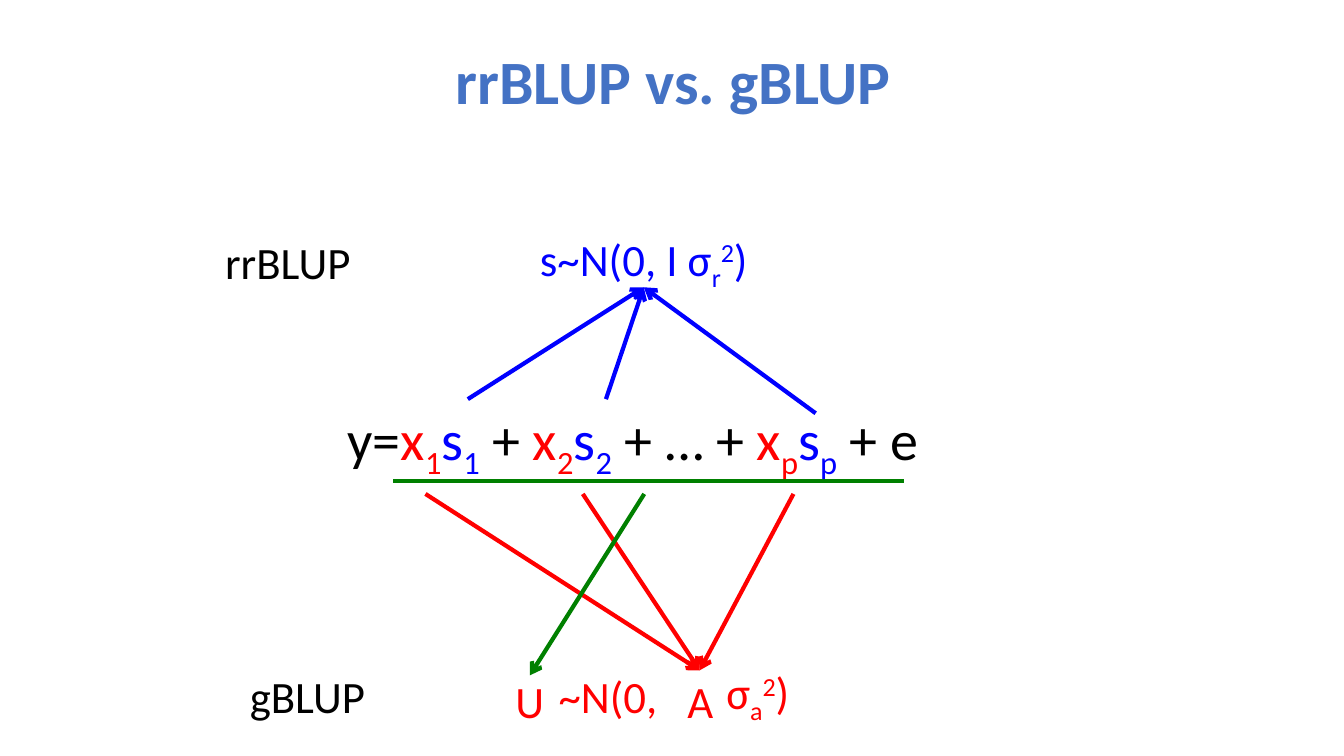
from lxml import etree
from pptx import Presentation
from pptx.dml.color import RGBColor
from pptx.enum.shapes import MSO_CONNECTOR
from pptx.enum.text import MSO_ANCHOR, MSO_AUTO_SIZE, PP_ALIGN
from pptx.oxml.ns import qn
from pptx.util import Pt

PX = 9144  # 100 px to the inch
STRAIGHT = MSO_CONNECTOR.STRAIGHT
LEFT, CENTER = PP_ALIGN.LEFT, PP_ALIGN.CENTER
TOP, MIDDLE = MSO_ANCHOR.TOP, MSO_ANCHOR.MIDDLE
FIT_SHAPE = MSO_AUTO_SIZE.SHAPE_TO_FIT_TEXT
SIDE_TOP, SIDE_BOTTOM = 0, 2

TITLE_BLUE = RGBColor(0x44, 0x72, 0xC4)
BLACK = RGBColor(0, 0, 0)
RED = RGBColor(0xFF, 0, 0)
BLUE = RGBColor(0, 0, 0xFF)
GREEN = RGBColor(0, 0x80, 0)

SUB, SUPER = -25, 30  # baseline shift in percent


def add_run(p, text, size=32, color=BLACK, bold=False, base=0, font="Calibri"):
    r = p.add_run()
    r.text = text
    r.font.name = font
    r.font.size = Pt(size)
    r.font.bold = bold
    r.font.color.rgb = color
    if base:
        r._r.get_or_add_rPr().set("baseline", str(base * 1000))


def term(index):
    """Runs of one marker term: x and s, each with its index."""
    return [("x", RED, 0), (index, RED, SUB), ("s", BLUE, 0), (index, BLUE, SUB)]


def variance(lead, index, color):
    """Runs of a variance: sigma with an index, squared."""
    return [(lead, color, 0), (index, color, SUB), ("2", color, SUPER), (")", color, 0)]


class Board:
    def __init__(self, slide):
        self.s = slide
        self.line_width = Pt(3)

    def text(self, x, y, w, h, runs, align=CENTER, anchor=MIDDLE, size=32,
             bold=False, spacing=None, indent=10, grow=False):
        sp = self.s.shapes.add_textbox(x * PX, y * PX, w * PX, h * PX)
        tf = sp.text_frame
        tf.word_wrap = True
        tf.vertical_anchor = anchor
        tf.margin_left = indent * PX
        if grow:
            tf.auto_size = FIT_SHAPE
        p = tf.paragraphs[0]
        p.alignment = align
        if spacing:
            p.line_spacing = spacing
        for text, color, base in runs:
            add_run(p, text, size=size, color=color, bold=bold, base=base)
        return sp

    def line(self, start, end, color, arrow=True, target=None, side=SIDE_TOP):
        cn = self.s.shapes.add_connector(STRAIGHT, *(v * PX for v in start + end))
        if target is not None:
            cn.end_connect(target, side)
        cn.line.color.rgb = color
        cn.line.width = self.line_width
        spPr = cn._element.spPr
        if arrow:
            etree.SubElement(spPr.find(qn("a:ln")), qn("a:tailEnd"), type="arrow")
        etree.SubElement(spPr, qn("a:effectLst"))


def main():
    prs = Presentation()
    prs.slide_width, prs.slide_height = 1333 * PX, 750 * PX
    b = Board(prs.slides.add_slide(prs.slide_layouts[6]))

    # Title
    b.text(93, 11, 1150, 145, [("rrBLUP vs. gBLUP", TITLE_BLUE, 0)],
           size=44, bold=True, spacing=0.9)

    # Model equation, underlined
    equation = [("y=", BLACK, 0), *term("1"), (" + ", BLACK, 0), *term("2"),
                (" + … + ", BLACK, 0), *term("p"), (" + e", BLACK, 0)]
    b.text(335, 396, 740, 77, equation, align=LEFT, anchor=TOP, size=40, grow=True)
    b.line((390, 477), (897, 477), GREEN, arrow=False)

    # Method names
    b.text(192, 235, 187, 50, [("rrBLUP", BLACK, 0)])
    b.text(217, 665, 176, 50, [("gBLUP", BLACK, 0)])

    # rrBLUP: marker effects share one distribution
    effects = b.text(481, 235, 315, 50, variance("s~N(0, I σ", "r", BLUE))
    for start in ((464, 396), (601, 396), (809, 410)):
        b.line(start, (639, 285), BLUE, target=effects, side=SIDE_BOTTOM)

    # gBLUP: genotypes form A, their sum forms U
    b.text(500, 665, 168, 50, [("~N(0,", RED, 0)], align=LEFT, indent=54)
    u = b.text(487, 670, 77, 50, [("U", RED, 0)])
    b.text(659, 670, 71, 50, [("A", RED, 0)])
    b.text(694, 665, 115, 50, variance("σ", "a", RED))
    for x in (787, 578, 422):
        b.line((x, 490), (694, 665), RED)
    b.line((639, 490), (525, 670), GREEN, target=u)

    prs.save("out.pptx")


if __name__ == "__main__":
    main()
